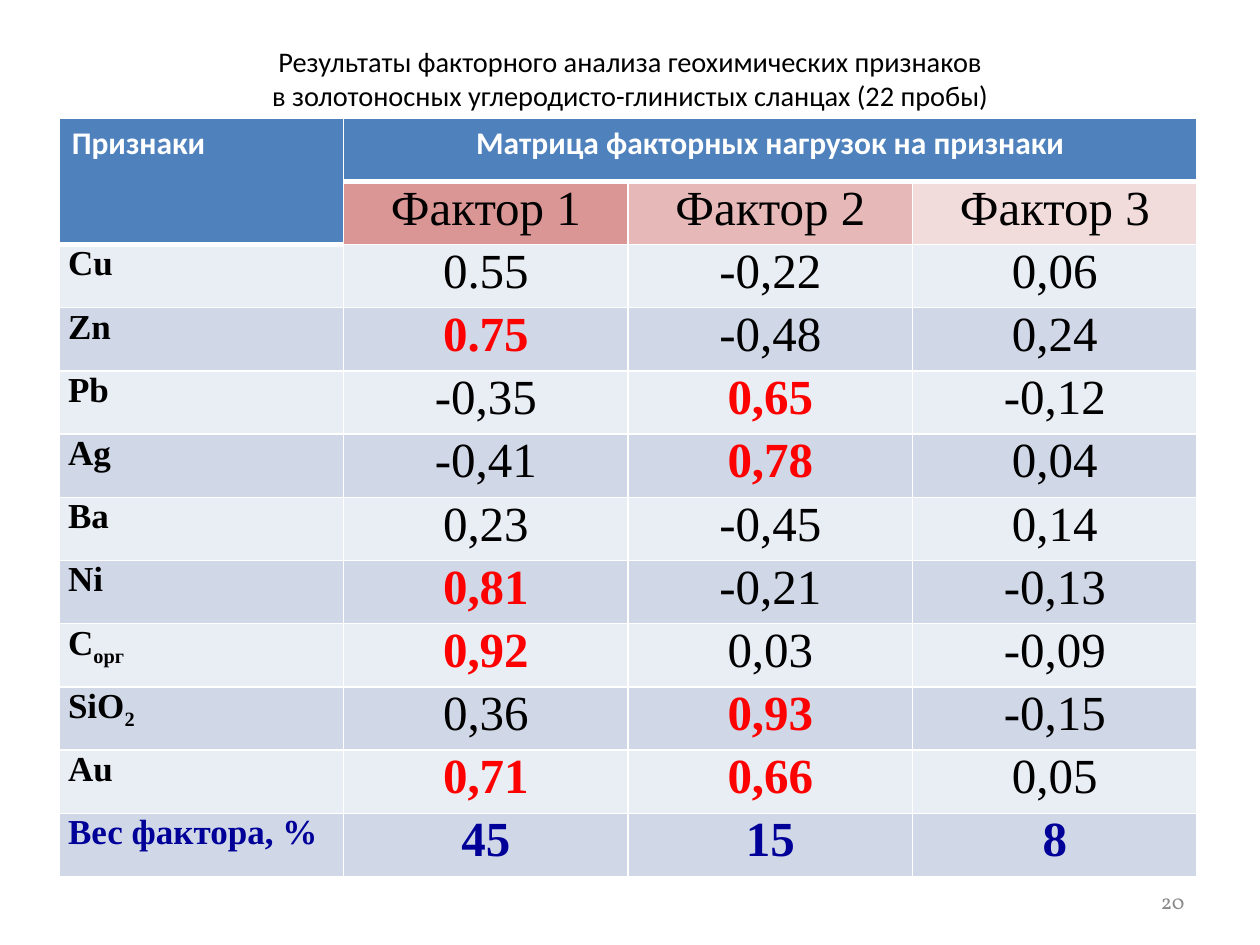
from lxml import etree
from pptx import Presentation
from pptx import util as u
from pptx.dml.color import RGBColor
from pptx.enum import text
from pptx.oxml import ns

WHITE = RGBColor(0xFF, 0xFF, 0xFF)
BLACK = RGBColor(0, 0, 0)
RED = RGBColor(0xFF, 0, 0)
NAVY = RGBColor(0, 0, 0x99)
GREY = RGBColor(0x89, 0x89, 0x89)
HEADER = RGBColor(0x4F, 0x81, 0xBD)
FACTOR_FILLS = [RGBColor(0xD9, 0x96, 0x94), RGBColor(0xE6, 0xB9, 0xB8),
                RGBColor(0xF2, 0xDC, 0xDB)]
BANDS = [RGBColor(0xE9, 0xED, 0xF4), RGBColor(0xD0, 0xD8, 0xE8)]

ALIGN = text.PP_ALIGN
ANCHOR = text.MSO_ANCHOR
SIGNIFICANT = 0.65

LOADINGS = [
    ("Cu", "0.55", "-0,22", "0,06"),
    ("Zn", "0.75", "-0,48", "0,24"),
    ("Pb", "-0,35", "0,65", "-0,12"),
    ("Ag", "-0,41", "0,78", "0,04"),
    ("Ba", "0,23", "-0,45", "0,14"),
    ("Ni", "0,81", "-0,21", "-0,13"),
    ("C_орг", "0,92", "0,03", "-0,09"),
    ("SiO_2", "0,36", "0,93", "-0,15"),
    ("Au", "0,71", "0,66", "0,05"),
]
WEIGHTS = ("Вес фактора, %", "45", "15", "8")


def write(frame, content, size=28, font="Times New Roman", color=BLACK,
          bold=False, align=ALIGN.CENTER):
    """Fill a frame; "_" starts a subscript, a line feed breaks the line."""
    paragraph = frame.paragraphs[0]
    paragraph.alignment = align
    for line_no, line in enumerate(content.split("\n")):
        if line_no:
            paragraph.add_line_break()
        for part_no, part in enumerate(line.split("_")):
            run = paragraph.add_run()
            run.text = part
            run.font.size = u.Pt(size)
            run.font.name = font
            run.font.bold = bold
            run.font.color.rgb = color
            if part_no:
                run._r.get_or_add_rPr().set("baseline", "-25000")


class Deck:
    def __init__(self, width=10, height=7.5):
        self.prs = Presentation()
        self.prs.slide_width = u.Inches(width)
        self.prs.slide_height = u.Inches(height)
        self.slide = self.prs.slides.add_slide(self.prs.slide_layouts[6])

    def area(self, left, top, width, height):
        """Turn shares of the slide into lengths."""
        w, h = self.prs.slide_width, self.prs.slide_height
        return int(left * w), int(top * h), int(width * w), int(height * h)

    def label(self, area, content, anchor=ANCHOR.MIDDLE, **style):
        frame = self.slide.shapes.add_textbox(*self.area(*area)).text_frame
        frame.word_wrap = True
        frame.vertical_anchor = anchor
        write(frame, content, **style)

    def grid(self, area, rows, cols):
        left, top, width, height = self.area(*area)
        table = self.slide.shapes.add_table(rows, cols, left, top, width, height).table
        for row in table.rows:
            row.height = height // rows
        for col in table.columns:
            col.width = width // cols
        return table

    def cell(self, cell, content, fill, tight=True, **style):
        cell.fill.solid()
        cell.fill.fore_color.rgb = fill
        if tight:
            cell.margin_left = cell.margin_right = u.Inches(0.07)
            cell.margin_top = cell.margin_bottom = 0
        if content:
            write(cell.text_frame, content, **style)

    def borders(self, cell, top=1, bottom=1):
        props = cell._tc.get_or_add_tcPr()
        for i, (side, points) in enumerate(
                [("L", 1), ("R", 1), ("T", top), ("B", bottom)]):
            line = etree.Element(ns.qn(f"a:ln{side}"), w=str(u.Pt(points)))
            fill = etree.SubElement(line, ns.qn("a:solidFill"))
            etree.SubElement(fill, ns.qn("a:srgbClr"), val=str(WHITE))
            props.insert(i, line)


def main():
    deck = Deck()

    # Heading
    deck.label((0.05, 0.04, 0.9, 0.167),
               "Результаты факторного анализа геохимических признаков\n"
               "в золотоносных углеродисто-глинистых сланцах (22 пробы)",
               anchor=ANCHOR.TOP, size=16.2, font="Calibri")

    # Table header
    body = LOADINGS + [WEIGHTS]
    loadings = deck.grid((0.047, 0.125, 0.903, 0.803), len(body) + 2, 4)
    titles = ["Признаки", "Матрица факторных нагрузок на признаки", "", ""]
    for c, title in enumerate(titles):
        deck.cell(loadings.cell(0, c), title, HEADER, tight=False, size=18,
                  font="Calibri", color=WHITE, bold=True,
                  align=ALIGN.CENTER if c else ALIGN.LEFT)
    deck.cell(loadings.cell(1, 0), "", HEADER)
    for c, fill in enumerate(FACTOR_FILLS, 1):
        deck.cell(loadings.cell(1, c), f"Фактор {c}", fill)

    # Loadings, with the significant ones in red, and factor weights
    for r, values in enumerate(body):
        is_weight = values is WEIGHTS
        for c, value in enumerate(values):
            strong = (c > 0 and not is_weight
                      and float(value.replace(",", ".")) >= SIGNIFICANT)
            deck.cell(loadings.cell(r + 2, c), value, BANDS[r % 2],
                      size=28 if c else 20,
                      color=NAVY if is_weight else RED if strong else BLACK,
                      bold=c == 0 or strong or is_weight,
                      align=ALIGN.CENTER if c else ALIGN.LEFT)

    # White rules, thicker below the header
    for r in range(len(body) + 2):
        for c in range(4):
            last_header = 0 if c else 1
            deck.borders(loadings.cell(r, c),
                         top=3 if r == last_header + 1 else 1,
                         bottom=3 if r == last_header or r + c == 0 else 1)
    loadings.cell(0, 0).merge(loadings.cell(1, 0))
    loadings.cell(0, 1).merge(loadings.cell(0, 3))

    # Page number
    deck.label((0.717, 0.927, 0.233, 0.053), "20", size=12, font="Vollkorn",
               color=GREY, align=ALIGN.RIGHT)

    deck.prs.save("out.pptx")


if __name__ == "__main__":
    main()
